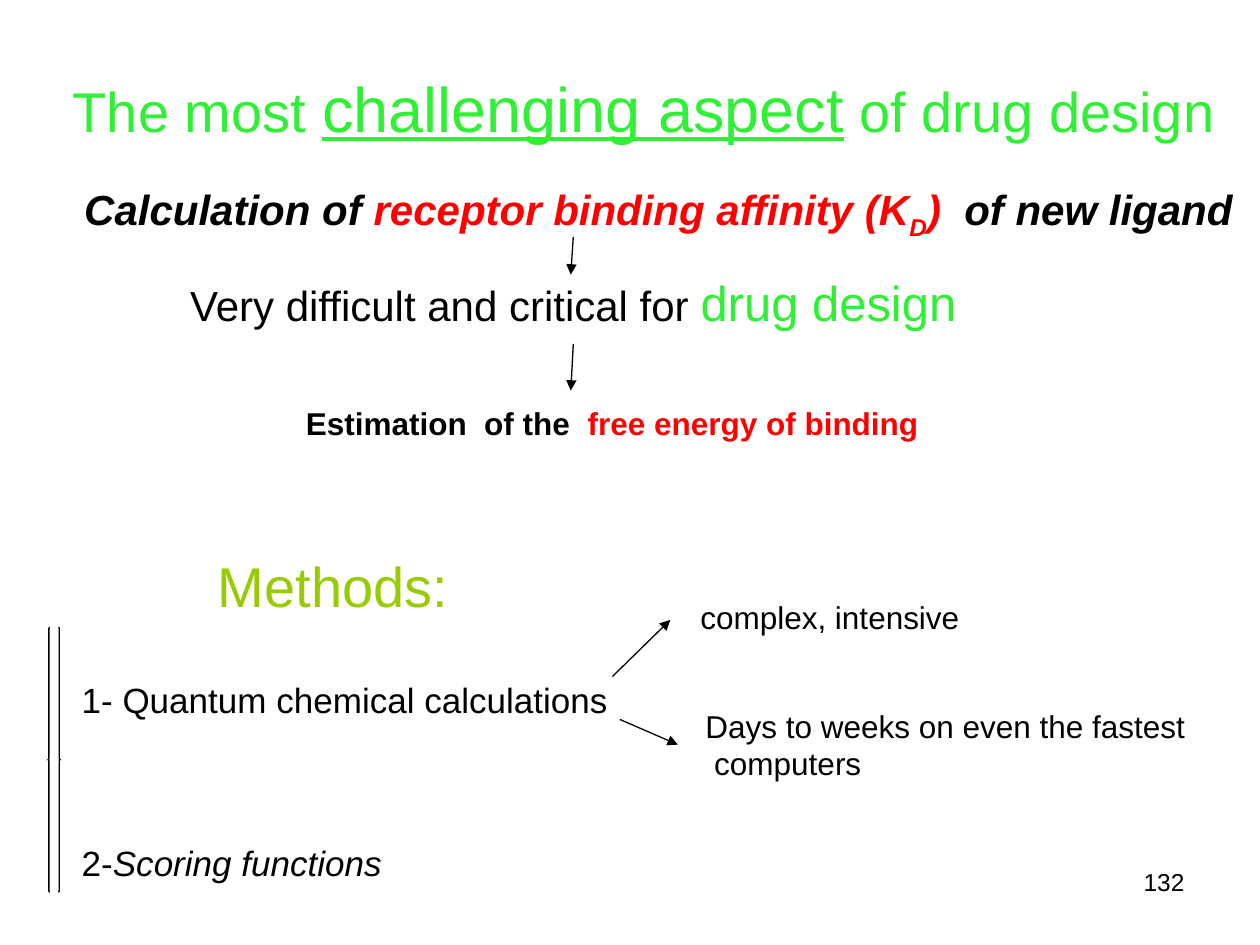
from lxml.etree import SubElement
from pptx import Presentation
from pptx.dml.color import RGBColor
from pptx.enum.shapes import MSO_CONNECTOR as Connector, MSO_SHAPE as Shape
from pptx.enum.text import PP_ALIGN as Align
from pptx.oxml.ns import qn
from pptx.util import Inches, Pt

BLACK = RGBColor(0, 0, 0)
RED = RGBColor(0xFF, 0, 0)
GREEN = RGBColor(0x30, 0xF0, 0x35)
OLIVE = RGBColor(0x99, 0xCC, 0)
LINE_WIDTH = Pt(0.75)


def add_span(para, text, size, color=BLACK, bold=False, italic=False, underline=False, baseline=None):
    """Append one formatted run to a paragraph."""
    span = para.add_run()
    span.text = text
    font = span.font
    font.name, font.size = "Arial", Pt(size)
    font.bold, font.italic, font.underline = bold, italic, underline
    font.color.rgb = color
    if baseline is not None:
        font._element.set("baseline", str(baseline * 1000))


def add_text(page, left, top, width, height, wrap=True):
    """Add an empty text box and return its text frame."""
    box = page.shapes.add_textbox(Inches(left), Inches(top), Inches(width), Inches(height))
    box.text_frame.word_wrap = wrap
    return box.text_frame


def indent(para, distance):
    """Set the left margin of a paragraph in inches."""
    para._p.get_or_add_pPr().set("marL", str(Inches(distance)))


def add_arrow(page, start, end):
    """Draw a thin straight arrow between two points."""
    arrow = page.shapes.add_connector(Connector.STRAIGHT, *map(Inches, start + end))
    arrow.line.color.rgb = BLACK
    arrow.line.width = LINE_WIDTH
    SubElement(arrow.line._get_or_add_ln(), qn("a:tailEnd"), type="triangle")
    SubElement(arrow._element.spPr, qn("a:effectLst"))


def add_braces(page, left, top, width, height):
    """Draw the pair of braces beside the methods."""
    braces = page.shapes.add_shape(Shape.DOUBLE_BRACE, *map(Inches, (left, top, width, height)))
    braces.adjustments[0] = 0.083
    braces.shadow.inherit = False
    braces.fill.background()
    braces.line.color.rgb = BLACK
    braces.line.width = LINE_WIDTH


def add_headings(page):
    """Write the title and the chain of statements below it."""
    title = add_text(page, 0.48, 0.5, 9.4, 0.7).paragraphs[0]
    add_span(title, "The most ", 32, GREEN)
    add_span(title, "challenging aspect", 36, GREEN, underline=True)
    add_span(title, " of drug design", 32, GREEN)

    affinity = add_text(page, 0.57, 1.41, 9.42, 0.5, wrap=False).paragraphs[0]
    strong = {"bold": True, "italic": True}
    add_span(affinity, "Calculation of ", 24, **strong)
    add_span(affinity, "receptor binding affinity (K", 24, RED, **strong)
    add_span(affinity, "D", 24, RED, baseline=-25, **strong)
    add_span(affinity, ")", 24, RED, **strong)
    add_span(affinity, "  of new ligand", 24, **strong)

    difficulty = add_text(page, 1.22, 2.11, 6.59, 0.57).paragraphs[0]
    indent(difficulty, 0.19)
    add_span(difficulty, "Very difficult and critical for ", 24)
    add_span(difficulty, "drug design", 28, GREEN)

    estimation = add_text(page, 1.91, 3.16, 5.8, 0.7).paragraphs[0]
    indent(estimation, 0.42)
    add_span(estimation, "Estimation  of the  ", 18, bold=True)
    add_span(estimation, "free energy of binding", 18, RED, bold=True)


def add_methods(page):
    """Write the two methods and the remarks on the first one."""
    frame = add_text(page, 0.55, 4.33, 4.44, 3.1)
    heading = frame.paragraphs[0]
    indent(heading, 1.08)
    add_span(heading, "Methods:", 32, OLIVE)
    quantum = frame.add_paragraph()
    quantum.space_before = Pt(34)
    add_span(quantum, "1- Quantum chemical calculations", 20)
    scoring = frame.add_paragraph()
    scoring.space_before = Pt(69)
    add_span(scoring, "2-", 20)
    add_span(scoring, "Scoring functions", 20, italic=True)

    remark = add_text(page, 5.46, 4.7, 2.33, 0.4, wrap=False)
    add_span(remark.paragraphs[0], "complex, intensive", 18)
    duration = add_text(page, 5.5, 5.56, 4.01, 0.7, wrap=False)
    add_span(duration.paragraphs[0], "Days to weeks on even the fastest", 18)
    computers = duration.add_paragraph()
    indent(computers, 0.07)
    add_span(computers, "computers", 18)


def main():
    """Build the slide and save the deck."""
    deck = Presentation()
    deck.slide_width, deck.slide_height = Inches(10), Inches(7.5)
    page = deck.slides.add_slide(deck.slide_layouts[6])
    add_headings(page)
    add_methods(page)
    for start, end in (
        ((4.55, 1.88), (4.53, 2.18)),
        ((4.55, 2.73), (4.53, 3.1)),
        ((4.86, 5.37), (5.32, 4.92)),
        ((4.92, 5.71), (5.38, 5.91)),
    ):
        add_arrow(page, start, end)
    add_braces(page, 0.38, 4.98, 0.1, 2.1)
    number = add_text(page, 7.17, 6.83, 2.33, 0.52).paragraphs[0]
    number.alignment = Align.RIGHT
    add_span(number, "132", 14)
    deck.save("out.pptx")


if __name__ == "__main__":
    main()
